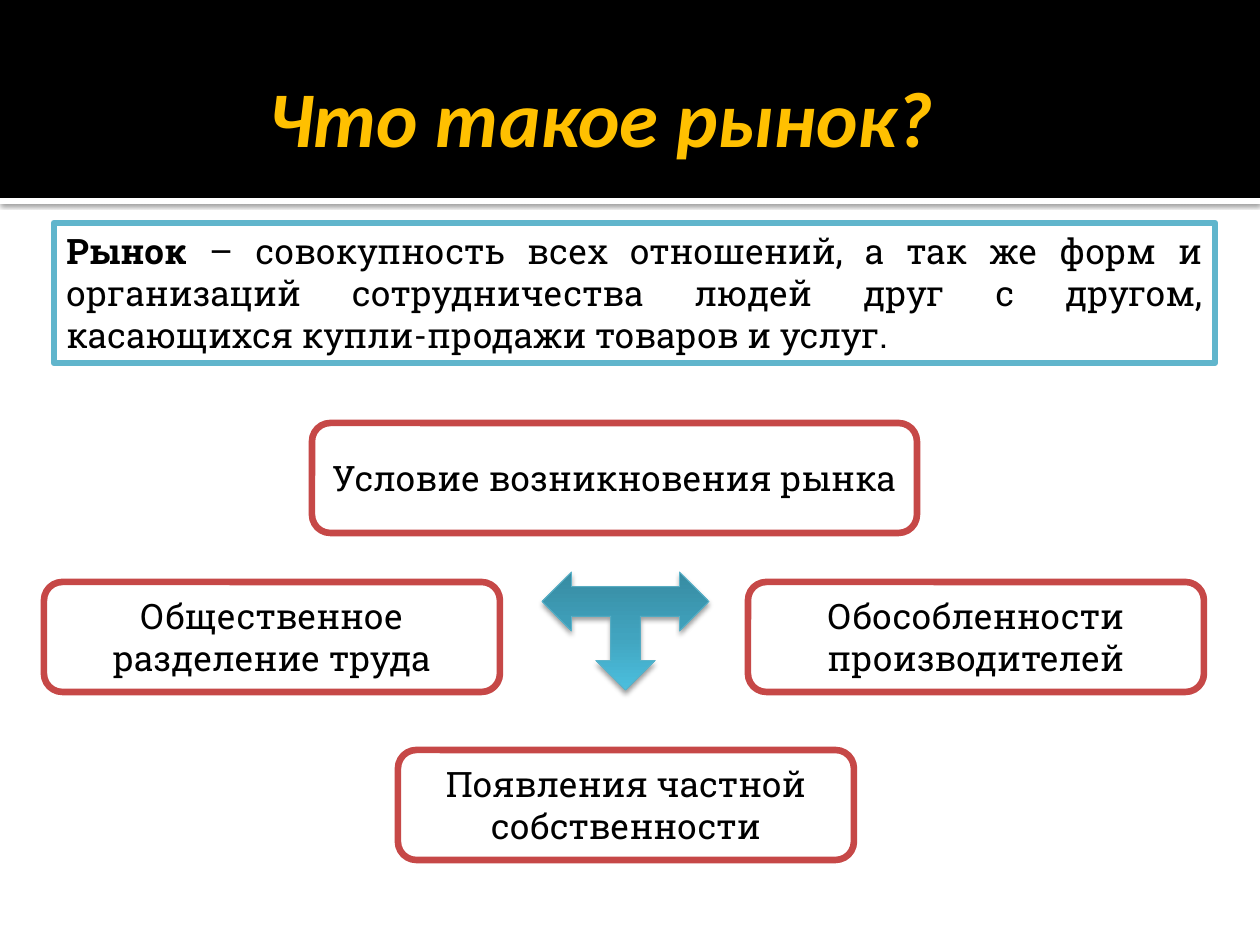
"""Build the slide that defines a market and the conditions for its rise."""
from copy import deepcopy

from lxml import etree
from pptx import Presentation
from pptx import util as u
from pptx.dml.color import RGBColor
from pptx.enum import shapes, text
from pptx.oxml.ns import qn

BLACK = RGBColor(0, 0, 0)
WHITE = RGBColor(255, 255, 255)
GOLD = RGBColor(0xFF, 0xC0, 0x00)
TEAL = RGBColor(0x60, 0xB5, 0xCC)
EDGE = RGBColor(0x5B, 0xB3, 0xCA)
RED = RGBColor(0xC6, 0x48, 0x47)
FADE = [(0, RGBColor(0x37, 0x8B, 0xA2)), (0.55, RGBColor(0x41, 0xA4, 0xBF)),
        (1, RGBColor(0x4B, 0xBF, 0xDE))]

TITLE = "Что такое рынок?"
TERM = "Рынок"
SENSE = (" – совокупность всех отношений, а так же форм и организаций сотрудничества "
         "людей друг с другом, касающихся купли-продажи товаров и услуг.\u00a0")
NODES = [
    ("Общественное разделение труда", 44, 582, 456),
    ("Обособленности производителей", 748, 582, 456),
    ("Появления частной собственности", 398, 750, 456),
    ("Условие возникновения рынка", 312, 423, 605),
]
TALL = 110
WIDE, HIGH, BAND = 1260, 945, 198
KIND = shapes.MSO_SHAPE
SIDE = text.PP_ALIGN


def px(n):
    return u.Emu(round(n * 914400 / 126))


def draw(kind, box, fill=None, line=None, width=3.78):
    item = slide.shapes.add_shape(kind, *map(px, box))
    item.shadow.inherit = False
    if fill is not None:
        item.fill.solid()
        item.fill.fore_color.rgb = fill
    if line is None:
        item.line.fill.background()
    else:
        item.line.color.rgb = line
        item.line.width = u.Pt(width)
    return item


def write(item, *parts, size=20, font="Roboto Slab", color=BLACK, italic=False,
          align=SIDE.CENTER, anchor=text.MSO_ANCHOR.MIDDLE):
    frame = item.text_frame
    frame.word_wrap = True
    frame.vertical_anchor = anchor
    para = frame.paragraphs[0]
    para.alignment = align
    for words, bold in parts:
        run = para.add_run()
        run.text = words
        face = run.font
        face.name, face.size, face.bold, face.italic = font, u.Pt(size), bold, italic
        face.color.rgb = color
    return frame


def shade(item, alpha, blur, dist):
    box = item._element.spPr.find(qn("a:effectLst"))
    cast = etree.SubElement(box, qn("a:outerShdw"), blurRad=str(u.Pt(blur)),
                            dist=str(u.Pt(dist)), dir="5400000", rotWithShape="0")
    tint = etree.SubElement(cast, qn("a:srgbClr"), val=str(BLACK))
    etree.SubElement(tint, qn("a:alpha"), val=str(alpha * 1000))


deck = Presentation()
deck.slide_width, deck.slide_height = px(WIDE), px(HIGH)
slide = deck.slides.add_slide(deck.slide_layouts[6])

shade(draw(KIND.RECTANGLE, (0, BAND, WIDE, 6), WHITE), 60, 2.5, 0.8)
draw(KIND.RECTANGLE, (0, 0, WIDE, BAND), BLACK)

head = slide.shapes.add_textbox(*map(px, (31, 37, 1134, 157)))
frame = write(head, (TITLE, True), size=45, font="Calibri", color=GOLD, italic=True)
frame.margin_right = u.Inches(0.05)

note = draw(KIND.RECTANGLE, (54, 223, 1161, 140), WHITE, TEAL)
write(note, (TERM, True), (SENSE, False), align=SIDE.JUSTIFY, anchor=text.MSO_ANCHOR.TOP)

for words, left, top, width in NODES:
    node = draw(KIND.ROUNDED_RECTANGLE, (left, top, width, TALL), WHITE, RED)
    write(node, (words, False))

arrow = draw(KIND.LEFT_RIGHT_UP_ARROW, (542, 572, 167, 118), line=EDGE, width=0.5)
arrow.fill.gradient()
arrow.fill.gradient_angle = 90
stops = next(arrow._element.spPr.iter(qn("a:gsLst")))
stops.insert(1, deepcopy(stops[0]))
for stop, (spot, color) in zip(arrow.fill.gradient_stops, FADE):
    stop.position = spot
    stop.color.rgb = color
arrow._element.spPr.find(qn("a:xfrm")).set("flipV", "1")
shade(arrow, 38, 3.1, 2)

deck.save("out.pptx")
